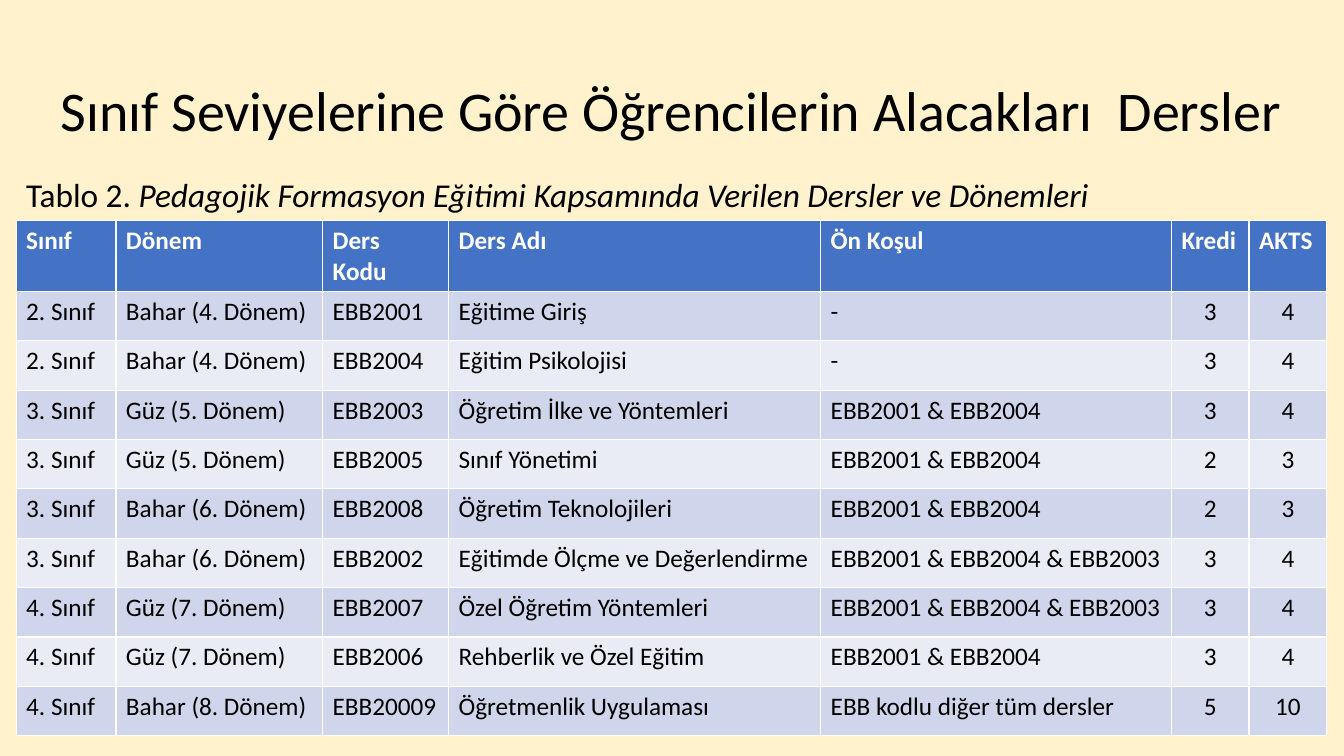
from dataclasses import dataclass, field
from typing import Any

from pptx import Presentation
from pptx.dml.color import RGBColor
from pptx.enum.text import MSO_ANCHOR, PP_ALIGN
from pptx.util import Inches, Pt

CREAM = RGBColor(0xFF, 0xF2, 0xCC)
BLACK = RGBColor(0x00, 0x00, 0x00)
WHITE = RGBColor(0xFF, 0xFF, 0xFF)
HEADER_BLUE = RGBColor(0x44, 0x72, 0xC4)
BANDS = (RGBColor(0xCF, 0xD5, 0xEA), RGBColor(0xE9, 0xEB, 0xF5))

LEFT, WIDTH = 0.16, 12.99
ROW_HEIGHT = 0.49
COLUMN_WIDTHS = (0.99, 2.05, 1.25, 3.69, 3.48, 0.77, 0.77)
HEADINGS = ("Sınıf", "Dönem", "Ders Kodu", "Ders Adı", "Ön Koşul", "Kredi", "AKTS")
BOTH = "EBB2001 & EBB2004"
ALL_THREE = f"{BOTH} & EBB2003"


@dataclass
class Course:
    year: int
    term: str
    code: str
    name: str
    prerequisite: str
    credit: int
    ects: int

    def cells(self) -> list[str]:
        return [f"{self.year}. Sınıf", f"{self.term} Dönem)", self.code, self.name,
                self.prerequisite, str(self.credit), str(self.ects)]


@dataclass
class TextBox:
    top: float
    width: float
    height: float
    size: float
    runs: list[tuple[str, bool]]
    frame: dict[str, Any] = field(default_factory=dict)
    paragraph: dict[str, Any] = field(default_factory=dict)


COURSES = [
    Course(2, "Bahar (4.", "EBB2001", "Eğitime Giriş", "-", 3, 4),
    Course(2, "Bahar (4.", "EBB2004", "Eğitim Psikolojisi", "-", 3, 4),
    Course(3, "Güz (5.", "EBB2003", "Öğretim İlke ve Yöntemleri", BOTH, 3, 4),
    Course(3, "Güz (5.", "EBB2005", "Sınıf Yönetimi", BOTH, 2, 3),
    Course(3, "Bahar (6.", "EBB2008", "Öğretim Teknolojileri", BOTH, 2, 3),
    Course(3, "Bahar (6.", "EBB2002", "Eğitimde Ölçme ve Değerlendirme", ALL_THREE, 3, 4),
    Course(4, "Güz (7.", "EBB2007", "Özel Öğretim Yöntemleri", ALL_THREE, 3, 4),
    Course(4, "Güz (7.", "EBB2006", "Rehberlik ve Özel Eğitim", BOTH, 3, 4),
    Course(4, "Bahar (8.", "EBB20009", "Öğretmenlik Uygulaması",
           "EBB kodlu diğer tüm dersler", 5, 10),
]

TEXT_BOXES = [
    TextBox(0.4, WIDTH, 1.45, 40,
            [("Sınıf Seviyelerine Göre Öğrencilerin Alacakları  Dersler", False)],
            {"vertical_anchor": MSO_ANCHOR.MIDDLE},
            {"alignment": PP_ALIGN.CENTER, "line_spacing": 0.9}),
    TextBox(1.76, 11.5, 0.51, 23.8,
            [("Tablo 2. ", False),
             ("Pedagojik Formasyon Eğitimi Kapsamında Verilen Dersler ve Dönemleri", True)],
            paragraph={"line_spacing": 0.8, "space_before": Pt(10)}),
]


def apply(target: Any, values: dict[str, Any]) -> None:
    for name, value in values.items():
        setattr(target, name, value)


def add_run(p: Any, text: str, size: float, color: RGBColor, **style: bool) -> None:
    r = p.add_run()
    r.text = text
    apply(r.font, {"name": "Calibri", "size": Pt(size), **style})
    r.font.color.rgb = color


def draw_text(s: Any, box: TextBox) -> None:
    sp = s.shapes.add_textbox(Inches(LEFT), Inches(box.top),
                              Inches(box.width), Inches(box.height))
    tf = sp.text_frame
    apply(tf, {"word_wrap": True, **box.frame})
    p = tf.paragraphs[0]
    apply(p, box.paragraph)
    for text, italic in box.runs:
        add_run(p, text, box.size, BLACK, italic=italic)


def draw_table(s: Any, courses: list[Course]) -> None:
    rows = [HEADINGS, *(course.cells() for course in courses)]
    table = s.shapes.add_table(len(rows), len(HEADINGS), Inches(LEFT), Inches(2.19),
                               Inches(WIDTH), Inches(ROW_HEIGHT * len(rows))).table
    for column, width in zip(table.columns, COLUMN_WIDTHS):
        column.width = Inches(width)
    for i, texts in enumerate(rows):
        header = i == 0
        table.rows[i].height = Inches(ROW_HEIGHT)
        for j, text in enumerate(texts):
            cell = table.cell(i, j)
            cell.fill.solid()
            cell.fill.fore_color.rgb = HEADER_BLUE if header else BANDS[(i - 1) % 2]
            p = cell.text_frame.paragraphs[0]
            if not header and j >= 5:
                p.alignment = PP_ALIGN.CENTER
            add_run(p, text, 18, WHITE if header else BLACK, bold=header)


def main() -> None:
    prs = Presentation()
    apply(prs, {"slide_width": Inches(13.33), "slide_height": Inches(7.5)})
    s = prs.slides.add_slide(prs.slide_layouts[6])
    s.background.fill.solid()
    s.background.fill.fore_color.rgb = CREAM
    for box in TEXT_BOXES:
        draw_text(s, box)
    draw_table(s, COURSES)
    prs.save("out.pptx")


if __name__ == "__main__":
    main()
